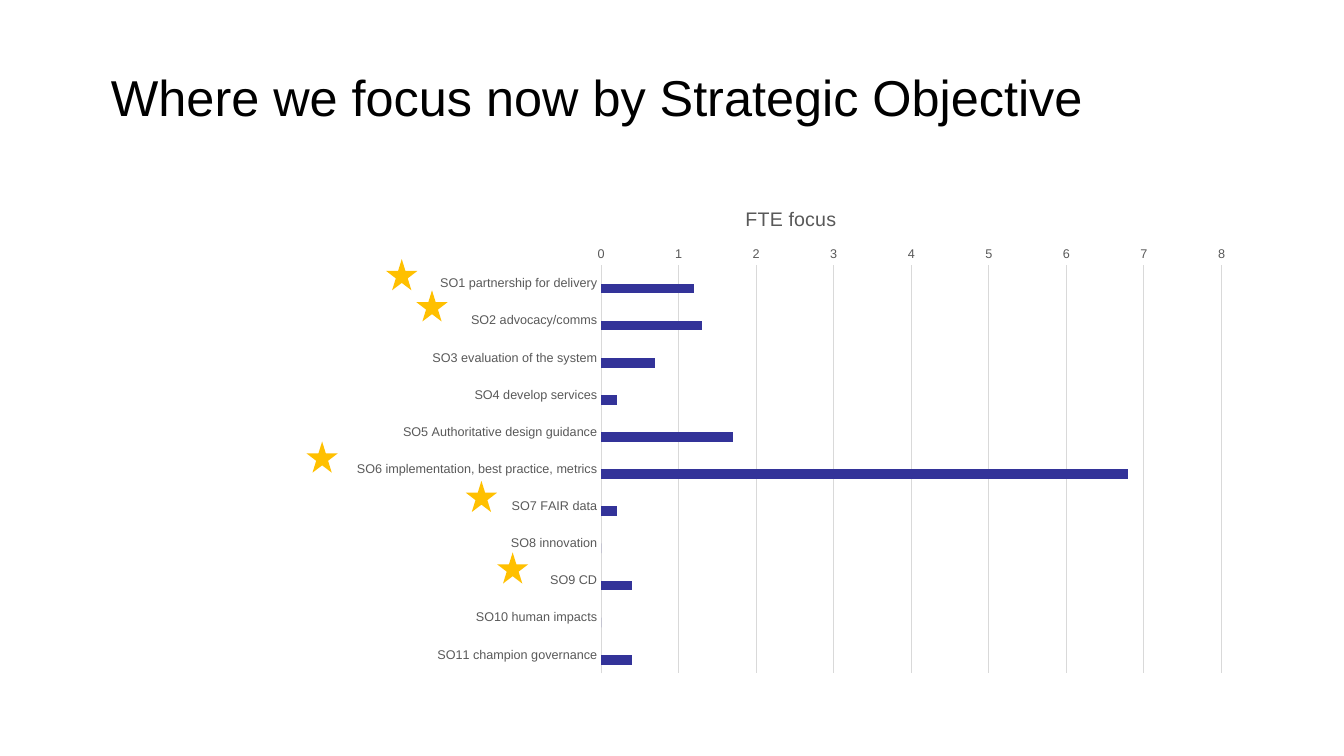
from typing import NamedTuple

from pptx import Presentation
from pptx.chart.data import CategoryChartData
from pptx.dml.color import RGBColor
from pptx.enum.chart import XL_CHART_TYPE as ChartType, XL_TICK_MARK as Tick
from pptx.enum.shapes import MSO_SHAPE as Shape
from pptx.enum.text import MSO_ANCHOR as Anchor, PP_ALIGN as Align
from pptx.util import Inches, Pt

FONT = "Arial"
COLORS = {
    "title": "000000",
    "label": "595959",
    "grid": "D9D9D9",
    "empty": "BBE0E3",
    "bar": "333399",
    "star": "FFC000",
}
STAR_SIZE = 0.31


class Objective(NamedTuple):
    """A strategic objective and its staffing."""
    name: str
    fte: float


class Star(NamedTuple):
    """Top left corner of a star, in inches."""
    left: float
    top: float


OBJECTIVES = [
    Objective("SO1 partnership for delivery", 1.2),
    Objective("SO2 advocacy/comms", 1.3),
    Objective("SO3 evaluation of the system", 0.7),
    Objective("SO4 develop services", 0.2),
    Objective("SO5 Authoritative design guidance", 1.7),
    Objective("SO6 implementation, best practice, metrics", 6.8),
    Objective("SO7 FAIR data", 0.2),
    Objective("SO8 innovation", 0),
    Objective("SO9 CD", 0.4),
    Objective("SO10 human impacts", 0),
    Objective("SO11 champion governance", 0.4),
]
STARS = [
    Star(3.83, 2.57),
    Star(4.13, 2.88),
    Star(3.04, 4.38),
    Star(4.62, 4.77),
    Star(4.93, 5.48),
]


def rgb(name: str) -> RGBColor:
    """Look up a named colour."""
    return RGBColor.from_string(COLORS[name])


def format_font(font, size: float, color: str) -> None:
    """Set the face, size and colour of a font."""
    font.name, font.size, font.bold = FONT, Pt(size), False
    font.color.rgb = rgb(color)


def write_text(tf, text: str, *, size: float, color: str, align=None) -> None:
    """Write one formatted paragraph into a text frame."""
    p = tf.paragraphs[0]
    p.alignment = align
    r = p.add_run()
    r.text = text
    format_font(r.font, size, color)


def format_line(line, color: str) -> None:
    """Give a chart line its colour and width."""
    line.color.rgb = rgb(color)
    line.width = Pt(0.75)


def add_title(s, text: str) -> None:
    """Place and fill the title placeholder."""
    sp = s.shapes.title
    sp.left, sp.top = Inches(1), Inches(0.33)
    sp.width, sp.height = Inches(11.33), Inches(1.25)
    tf = sp.text_frame
    tf.word_wrap = True
    tf.vertical_anchor = Anchor.MIDDLE
    write_text(tf, text, size=36, color="title", align=Align.LEFT)


def add_focus_chart(s, objectives: list[Objective]) -> None:
    """Draw the bar chart of staffing by objective."""
    data = CategoryChartData()
    data.categories = [o.name for o in objectives]
    data.add_series("Series 1", [None] * len(objectives))
    data.add_series("Series 2", [o.fte for o in objectives])
    chart = s.shapes.add_chart(
        ChartType.BAR_CLUSTERED,
        Inches(3.36), Inches(1.86), Inches(8.97), Inches(4.92), data,
    ).chart
    format_font(chart.font, 10, "title")
    chart.has_legend = False
    chart.has_title = True
    write_text(chart.chart_title.text_frame, "FTE focus", size=14, color="label")
    chart.chart_title.include_in_layout = False

    plot = chart.plots[0]
    plot.gap_width = 182
    plot.vary_by_categories = False
    for series, color in zip(plot.series, ("empty", "bar")):
        series.format.fill.solid()
        series.format.fill.fore_color.rgb = rgb(color)

    cat_axis, val_axis = chart.category_axis, chart.value_axis
    for axis in (cat_axis, val_axis):
        axis.major_tick_mark = axis.minor_tick_mark = Tick.NONE
        format_font(axis.tick_labels.font, 9, "label")
    cat_axis.reverse_order = True
    format_line(cat_axis.format.line, "grid")
    val_axis.minimum_scale, val_axis.maximum_scale = 0, 8
    val_axis.major_unit = 1
    val_axis.format.line.fill.background()
    val_axis.has_major_gridlines = True
    format_line(val_axis.major_gridlines.format.line, "grid")


def add_star(s, star: Star) -> None:
    """Draw a star that marks an objective."""
    size = Inches(STAR_SIZE)
    sp = s.shapes.add_shape(
        Shape.STAR_5_POINT, Inches(star.left), Inches(star.top), size, size
    )
    sp.shadow.inherit = False
    sp.fill.solid()
    sp.fill.fore_color.rgb = rgb("star")
    sp.line.fill.background()


def main() -> None:
    """Build and save the slide."""
    prs = Presentation()
    prs.slide_width, prs.slide_height = Inches(13.33), Inches(7.5)
    s = prs.slides.add_slide(prs.slide_layouts.get_by_name("Title Only"))
    add_title(s, "Where we focus now by Strategic Objective")
    add_focus_chart(s, OBJECTIVES)
    for star in STARS:
        add_star(s, star)
    prs.save("out.pptx")


if __name__ == "__main__":
    main()
